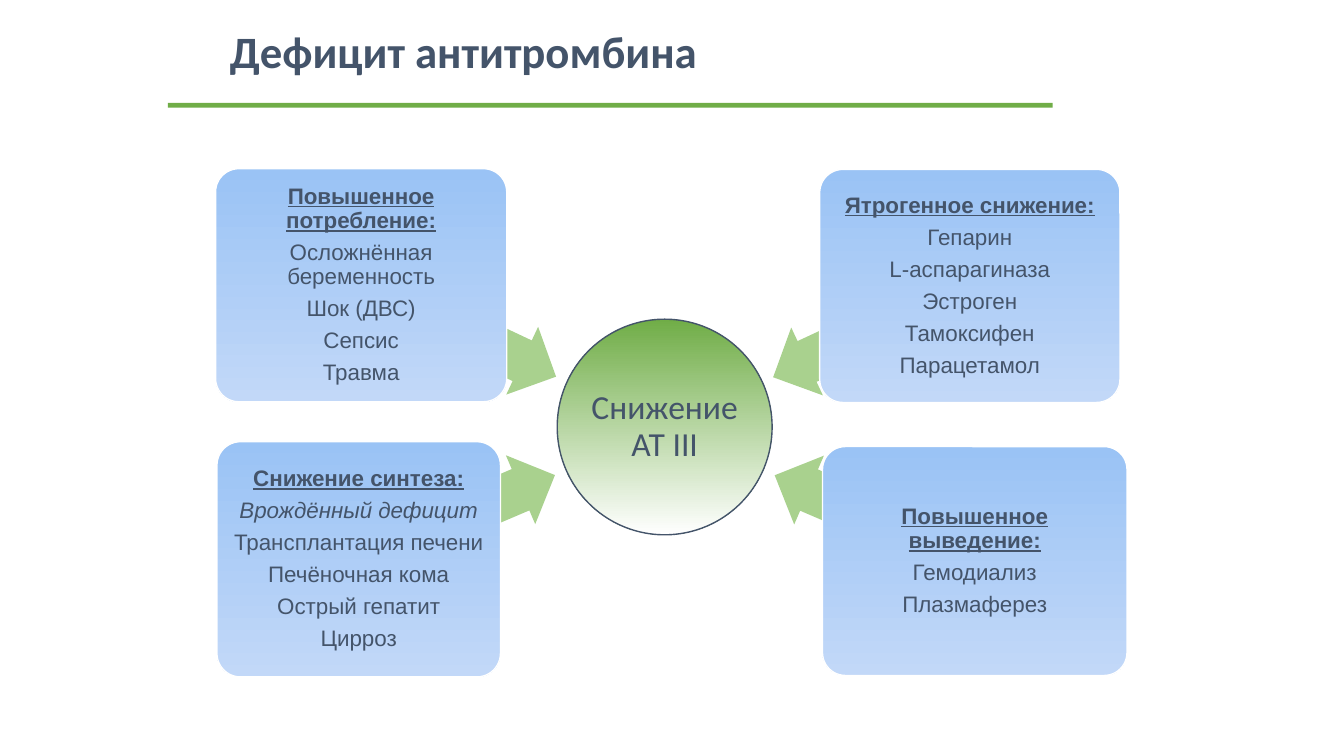
from pptx import Presentation
from pptx.dml.color import RGBColor
from pptx.enum.shapes import MSO_SHAPE
from pptx.enum.text import MSO_ANCHOR, PP_ALIGN
from pptx.util import Pt

SLATE = RGBColor(0x44, 0x54, 0x6A)
GREEN = RGBColor(0x70, 0xAD, 0x47)
LIGHT_GREEN = RGBColor(0xA9, 0xD1, 0x8E)
BLUE = RGBColor(0x9A, 0xC3, 0xF5)
PALE_BLUE = RGBColor(0xC2, 0xD8, 0xF8)
WHITE = RGBColor(0xFF, 0xFF, 0xFF)

TITLE = "Дефицит антитромбина"
TITLE_BOX = (157, 15, 412, 42)
RULE_BOX = (120, 73.5, 632, 3.5)
CENTER_TEXT = "Снижение АТ III"
CENTER_BOX = (398, 228, 153.5, 154)
ARROW_HEIGHT = 53.5

CAUSES = [
    {
        "heading": "Снижение синтеза:",
        "items": ["Врождённый дефицит", "Трансплантация печени", "Печёночная кома",
                  "Острый гепатит", "Цирроз"],
        "box": (155, 315.5, 202.5, 168),
        "arrow": (250, 342.5, 152.5),
        "rotation": 156.9,
    },
    {
        "heading": "Повышенное потребление:",
        "items": ["Осложнённая беременность", "Шок (ДВС)", "Сепсис", "Травма"],
        "box": (154, 120.5, 208, 166.5),
        "arrow": (250.5, 209.5, 154),
        "rotation": 205.2,
    },
    {
        "heading": "Ятрогенное снижение:",
        "items": ["Гепарин", "L-аспарагиназа", "Эстроген", "Тамоксифен", "Парацетамол"],
        "box": (585.5, 121, 214.5, 166.5),
        "arrow": (545, 210, 155),
        "rotation": 335,
    },
    {
        "heading": "Повышенное выведение:",
        "items": ["Гемодиализ", "Плазмаферез"],
        "box": (587.5, 319, 217.5, 163.5),
        "arrow": (547, 343.5, 155.5),
        "rotation": 23.3,
    },
]
ITALIC_ITEMS = {"Врождённый дефицит"}

TITLE_FONT = {"name": "Calibri", "size": Pt(32), "bold": True}
CENTER_FONT = {"name": "Calibri", "size": Pt(24)}
ITEM_FONT = {"name": "Arial", "size": Pt(16)}
HEADING_FONT = {**ITEM_FONT, "bold": True, "underline": True}
ITALIC_FONT = {**ITEM_FONT, "italic": True}


def apply_format(target, values):
    for name, value in values.items():
        setattr(target, name, value)


def add_plain_shape(slide, kind, box, color):
    shape = slide.shapes.add_shape(kind, *map(Pt, box))
    shape.shadow.inherit = False
    shape.fill.solid()
    shape.fill.fore_color.rgb = color
    shape.line.fill.background()
    return shape


def add_gradient_shape(slide, kind, box, top_color, bottom_color, line_color):
    shape = add_plain_shape(slide, kind, box, top_color)
    shape.fill.gradient()
    shape.fill.gradient_angle = 270
    for stop, color in zip(shape.fill.gradient_stops, (top_color, bottom_color)):
        stop.color.rgb = color
    shape.line.color.rgb = line_color
    shape.line.width = Pt(1)
    return shape


def write_lines(shape, lines, margin):
    frame = shape.text_frame
    frame.word_wrap = True
    frame.vertical_anchor = MSO_ANCHOR.MIDDLE
    sides = ("left", "top", "right", "bottom")
    apply_format(frame, {f"margin_{side}": Pt(margin) for side in sides})
    frame.text = "\n".join(text for text, _ in lines)
    for paragraph, (_, font) in zip(frame.paragraphs, lines):
        apply_format(paragraph, {
            "alignment": PP_ALIGN.CENTER,
            "line_spacing": 0.9,
            "space_after": Pt(font["size"].pt * 0.35),
        })
        apply_format(paragraph.font, font)
        paragraph.font.color.rgb = SLATE


def add_title(slide):
    title = slide.shapes.title
    left, top, width, height = map(Pt, TITLE_BOX)
    apply_format(title, {"left": left, "top": top, "width": width, "height": height})
    title.text_frame.text = TITLE
    title.text_frame.vertical_anchor = MSO_ANCHOR.MIDDLE
    paragraph = title.text_frame.paragraphs[0]
    paragraph.alignment = PP_ALIGN.LEFT
    apply_format(paragraph.font, TITLE_FONT)
    paragraph.font.color.rgb = SLATE


def add_cause(slide, cause):
    arrow_box = (*cause["arrow"], ARROW_HEIGHT)
    arrow = add_plain_shape(slide, MSO_SHAPE.LEFT_ARROW, arrow_box, LIGHT_GREEN)
    arrow.rotation = cause["rotation"]
    arrow.adjustments[0] = 0.6
    arrow.adjustments[1] = 0.5

    card = add_gradient_shape(
        slide, MSO_SHAPE.ROUNDED_RECTANGLE, cause["box"], BLUE, PALE_BLUE, WHITE)
    card.adjustments[0] = 0.1
    lines = [(cause["heading"], HEADING_FONT)]
    for item in cause["items"]:
        lines.append((item, ITALIC_FONT if item in ITALIC_ITEMS else ITEM_FONT))
    write_lines(card, lines, 7)


def main():
    presentation = Presentation()
    presentation.slide_width = Pt(960)
    presentation.slide_height = Pt(540)
    slide = presentation.slides.add_slide(presentation.slide_layouts.get_by_name("Title Only"))
    add_title(slide)
    circle = add_gradient_shape(slide, MSO_SHAPE.OVAL, CENTER_BOX, GREEN, WHITE, SLATE)
    write_lines(circle, [(CENTER_TEXT, CENTER_FONT)], 1.5)
    for cause in CAUSES:
        add_cause(slide, cause)
    add_plain_shape(slide, MSO_SHAPE.RECTANGLE, RULE_BOX, GREEN)
    presentation.save("out.pptx")


if __name__ == "__main__":
    main()
